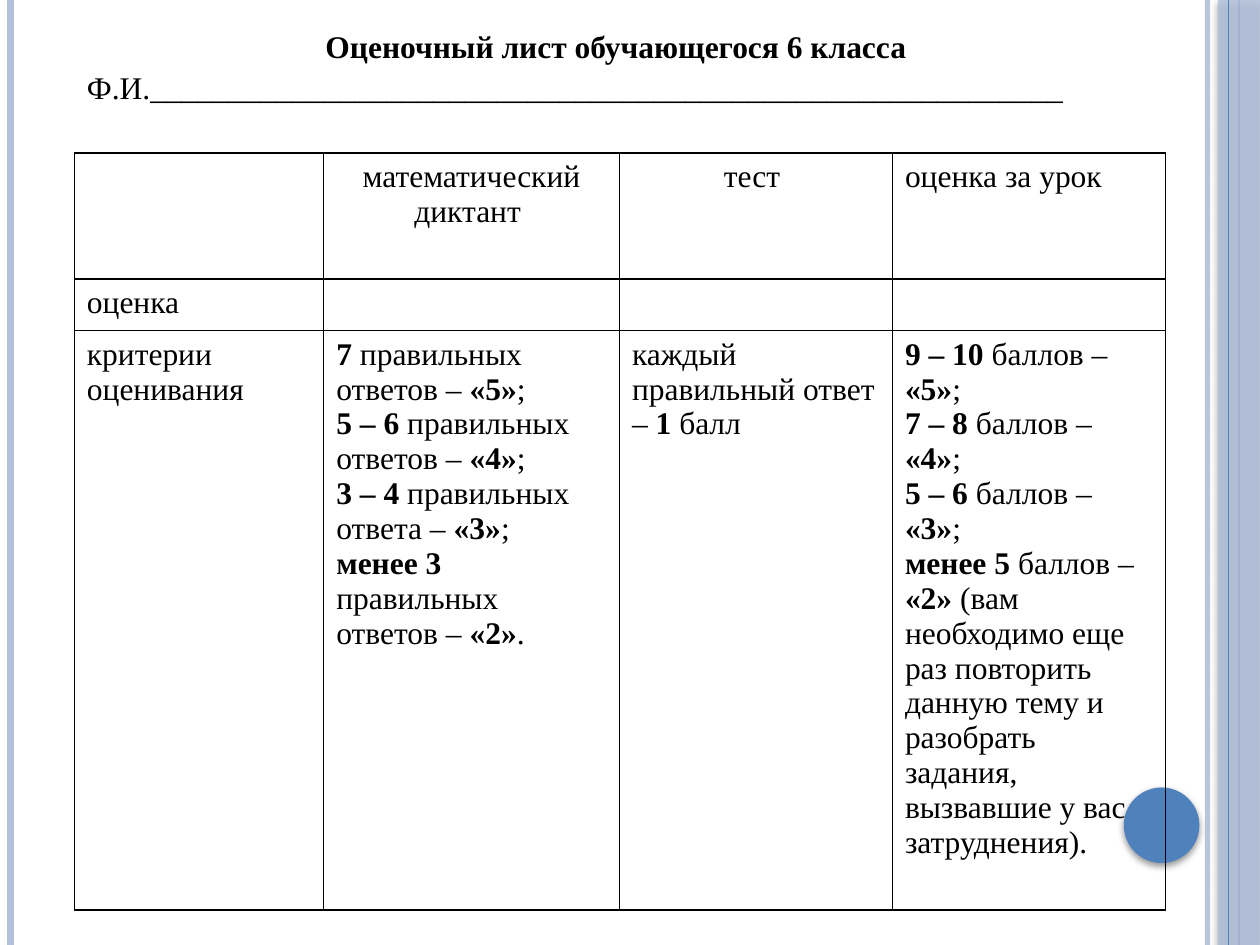
from dataclasses import dataclass
from lxml import etree
from pptx import Presentation
from pptx import util as u
from pptx.dml import color as col
from pptx.enum import shapes, text
from pptx.oxml import ns

LEFT, MID = text.PP_ALIGN.LEFT, text.PP_ALIGN.CENTER


@dataclass
class Theme:
    font: str = "Times New Roman"
    size: float = 18
    ink: str = "000000"
    pale: str = "B3C1DB"
    blue: str = "4F81BD"
    rule: float = 0.96


def sub(node, tag, **attrs):
    return etree.SubElement(node, ns.qn(tag), {k: str(v) for k, v in attrs.items()})


class Sheet:
    """Draw themed elements on one slide, with all lengths in points."""

    def __init__(self, deck, theme):
        self.theme = theme
        self.slide = deck.slides.add_slide(deck.slide_layouts[5])

    def fade(self, node, alpha):
        for rgb in node.iter(ns.qn("a:srgbClr")):
            sub(rgb, "a:alpha", val=alpha * 1000)

    def fill_text(self, frame, lines, aligns, gap=1.0):
        for i, (line, align) in enumerate(zip(lines, aligns)):
            para = frame.add_paragraph() if i else frame.paragraphs[0]
            para.alignment, para.line_spacing = align, gap
            for k, part in enumerate(line.split("*")):
                if part:
                    run = para.add_run()
                    run.text = part
                    font = run.font
                    font.name, font.size = self.theme.font, u.Pt(self.theme.size)
                    font.bold = k % 2 == 1
                    font.color.rgb = col.RGBColor.from_string(self.theme.ink)

    def title(self, box, lines, aligns):
        head = self.slide.shapes.title
        head.left, head.top, head.width, head.height = map(u.Pt, box)
        frame = head.text_frame
        frame.word_wrap = True
        frame.auto_size = text.MSO_AUTO_SIZE.NONE
        frame.vertical_anchor = text.MSO_ANCHOR.TOP
        self.fill_text(frame, lines, aligns, 1.1)

    def stripe(self, x, tall, tint, width, alpha=100):
        line = self.slide.shapes.add_connector(
            shapes.MSO_CONNECTOR.STRAIGHT, u.Pt(x), 0, u.Pt(x), u.Pt(tall))
        line.line.color.rgb = col.RGBColor.from_string(tint)
        line.line.width = u.Pt(width)
        props = line._element.spPr
        if alpha < 100:
            self.fade(props, alpha)
        sub(props, "a:effectLst")

    def shape(self, kind, box, tint, alpha=100):
        item = self.slide.shapes.add_shape(kind, *map(u.Pt, box))
        item.fill.solid()
        item.fill.fore_color.rgb = col.RGBColor.from_string(tint)
        item.line.fill.background()
        props = item._element.spPr
        if alpha < 100:
            self.fade(props, alpha)
        shade = sub(sub(props, "a:effectLst"), "a:outerShdw", blurRad=u.Pt(4),
                    dist=u.Pt(2), dir=90 * 60000, rotWithShape=0)
        sub(shade, "a:srgbClr", val=self.theme.ink)
        self.fade(shade, 40)

    def edge(self, cell):
        props = cell._tc.get_or_add_tcPr()
        for side in ("L", "R", "T", "B"):
            line = sub(props, f"a:ln{side}", w=u.Pt(self.theme.rule))
            sub(sub(line, "a:solidFill"), "a:srgbClr", val=self.theme.ink)
        cell.fill.background()

    def table(self, left, top, wide, high, cells):
        grid = self.slide.shapes.add_table(
            len(high), len(wide), u.Pt(left), u.Pt(top),
            u.Pt(sum(wide)), u.Pt(sum(high))).table
        grid.first_row = grid.horz_banding = False
        for part, width in zip(grid.columns, wide):
            part.width = u.Pt(width)
        for part, height in zip(grid.rows, high):
            part.height = u.Pt(height)
        for r, row in enumerate(cells):
            for c, lines in enumerate(row):
                cell = grid.cell(r, c)
                align = MID if r == 0 and c in (1, 2) else LEFT
                self.fill_text(cell.text_frame, lines, [align] * len(lines))
                self.edge(cell)


def main():
    deck = Presentation()
    deck.slide_width, deck.slide_height = u.Pt(720), u.Pt(540)
    theme = Theme()
    sheet = Sheet(deck, theme)
    kinds = shapes.MSO_SHAPE
    sheet.stripe(690, 540, theme.pale, 3, 93)
    sheet.stripe(6, 540, theme.pale, 4.5)
    sheet.stripe(708, 540, theme.blue, 1.5)
    sheet.shape(kinds.RECTANGLE, (696, 0, 24, 540), theme.pale, 87)
    sheet.stripe(702, 540, theme.blue, 0.75)
    sheet.shape(kinds.OVAL, (642.2, 450, 43.2, 43.2), theme.blue)

    tests = ["*7 *правильных ответов – *«5»*;",
             "*5 – 6 *правильных ответов – *«4»*;",
             "*3 – 4 *правильных ответа – *«3»*;",
             "*менее 3 *правильных ответов – *«2»*."]
    marks = ["*9 – 10 *баллов – *«5»*;",
             "*7 – 8 *баллов – *«4»*;",
             "*5 – 6 *баллов – *«3»*;",
             "*менее 5 *баллов – *«2» *(вам необходимо еще раз повторить данную "
             "тему и разобрать задания, вызвавшие у вас затруднения)."]
    sheet.table(42.5, 87.5, (142.5, 169, 156, 156), (72, 29.5, 331), [
        [[], ["математический диктант "], ["тест "], ["оценка за урок"]],
        [["оценка"], [], [], []],
        [["критерии оценивания"], tests,
         ["каждый правильный ответ – *1 *балл"], marks]])
    sheet.title((42.5, 9.4, 623.5, 72),
                ["*Оценочный лист обучающегося 6 класса *", "Ф.И." + "_" * 58],
                [MID, LEFT])
    deck.save("out.pptx")


if __name__ == "__main__":
    main()
